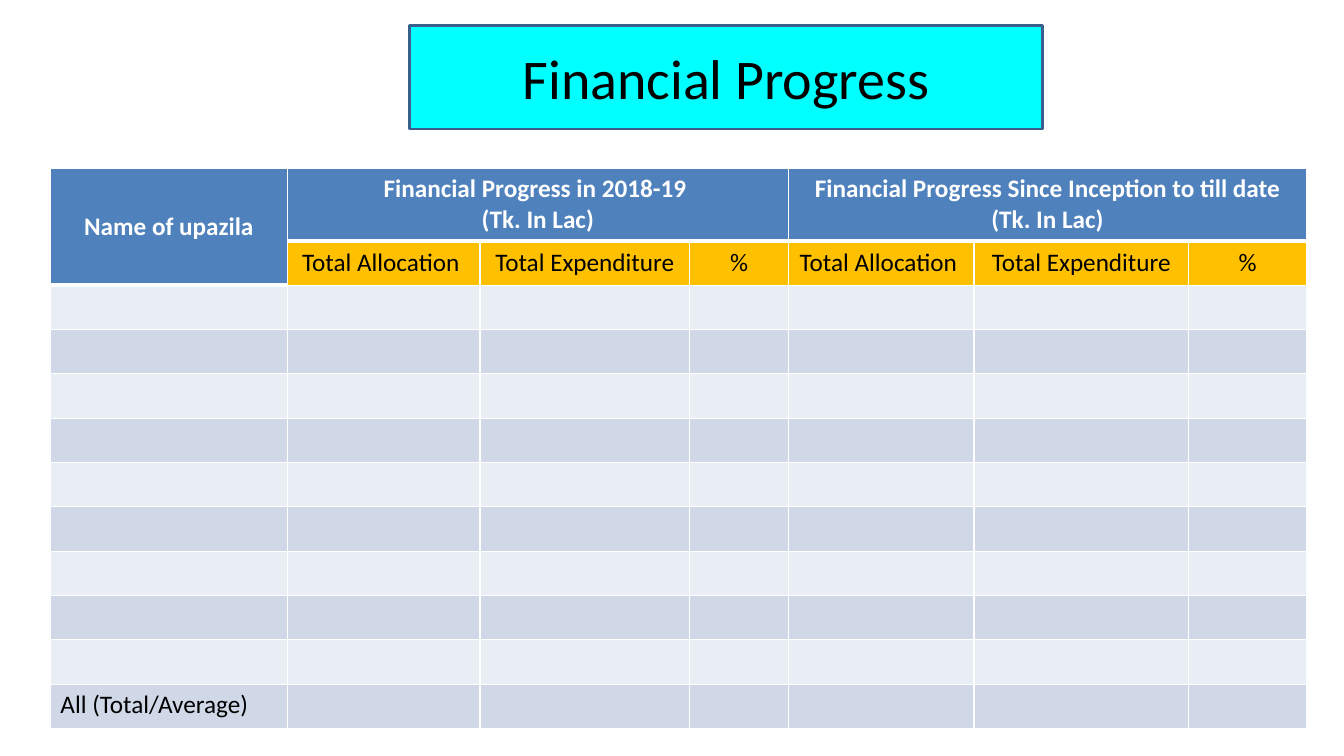
from lxml import etree
from pptx import Presentation, util as u
from pptx.dml.color import RGBColor
from pptx.enum import shapes, text
from pptx.oxml.ns import qn

WHITE, BLACK, CYAN, NAVY = "FFFFFF", "000000", "00FFFF", "3A5F8C"
BLUE, AMBER, BANDS = "4F81BD", "FFC000", ("E9EDF4", "D0D8E8")
COLUMNS = (2.35, 1.91, 2.08, 0.98, 1.84, 2.13, 1.17)
HEADER_HEIGHT, ROW_HEIGHT, ROWS = 0.72, 0.44, 12
GROUPS = {1: "Financial Progress in 2018-19 \n(Tk. In Lac)",
          4: "Financial Progress Since Inception to till date\n(Tk. In Lac)"}
MEASURES = ("Total Allocation ", "Total Expenditure", "%")


def rgb(value):
    return RGBColor.from_string(value)


def fill(target, color):
    target.fill.solid()
    target.fill.fore_color.rgb = rgb(color)


def write(tf, content, size=18, color=BLACK, bold=False, font="Calibri",
          align=text.PP_ALIGN.CENTER):
    """Put one paragraph per line of content into the text frame."""
    for i, line in enumerate(content.split("\n")):
        p = tf.add_paragraph() if i else tf.paragraphs[0]
        p.alignment = align
        r = p.add_run()
        r.text = line
        r.font.size, r.font.bold, r.font.name = u.Pt(size), bold, font
        r.font.color.rgb = rgb(color)


def border(cell, top=1, bottom=1):
    """Draw white cell borders; top and bottom are widths in points."""
    props = cell._tc.get_or_add_tcPr()
    for side, width in (("L", 1), ("R", 1), ("T", top), ("B", bottom)):
        ln = etree.SubElement(props, qn(f"a:ln{side}"), w=str(u.Pt(width)))
        solid = etree.SubElement(ln, qn("a:solidFill"))
        etree.SubElement(solid, qn("a:srgbClr"), val=WHITE)


class ProgressSlide:
    def __init__(self, prs):
        self.s = prs.slides.add_slide(prs.slide_layouts[6])

    def title(self, content, *box):
        sp = self.s.shapes.add_shape(shapes.MSO_SHAPE.RECTANGLE, *map(u.Inches, box))
        sp.shadow.inherit = False
        fill(sp, CYAN)
        sp.line.color.rgb, sp.line.width = rgb(NAVY), u.Pt(2)
        sp.text_frame.vertical_anchor = text.MSO_ANCHOR.MIDDLE
        write(sp.text_frame, content, size=40)

    def cell(self, row, col, content="", **style):
        cell = self.table.cell(row, col)
        if row < 2:
            cell.vertical_anchor = text.MSO_ANCHOR.MIDDLE
        write(cell.text_frame, content, **style)

    def progress_table(self, left, top):
        heights = [HEADER_HEIGHT] + [ROW_HEIGHT] * (ROWS - 1)
        frame = self.s.shapes.add_table(
            ROWS, len(COLUMNS), u.Inches(left), u.Inches(top),
            u.Inches(sum(COLUMNS)), u.Inches(sum(heights)))
        self.table = frame.table
        for column, width in zip(self.table.columns, COLUMNS):
            column.width = u.Inches(width)
        for row, height in zip(self.table.rows, heights):
            row.height = u.Inches(height)
        for row in range(ROWS):
            for col in range(len(COLUMNS)):
                self.paint(row, col)

        self.table.cell(0, 0).merge(self.table.cell(1, 0))
        self.cell(0, 0, "Name of upazila", color=WHITE, bold=True)
        for first, heading in GROUPS.items():
            self.table.cell(0, first).merge(self.table.cell(0, first + 2))
            self.cell(0, first, heading, color=WHITE, bold=True)
            for i, measure in enumerate(MEASURES):
                self.cell(1, first + i, measure)
        self.cell(ROWS - 1, 0, "All (Total/Average)", align=text.PP_ALIGN.LEFT)

    def paint(self, row, col):
        """Fill and border a cell; thick rules close the blue headings."""
        cell = self.table.cell(row, col)
        last_heading_row = 0 if col else 1
        border(cell, top=3 if row == last_heading_row + 1 else 1,
               bottom=3 if row <= last_heading_row else 1)
        if row <= last_heading_row:
            fill(cell, BLUE)
        else:
            fill(cell, AMBER if row == 1 else BANDS[row % 2])


def main():
    prs = Presentation()
    prs.slide_width, prs.slide_height = u.Inches(13.33), u.Inches(7.5)
    slide = ProgressSlide(prs)
    slide.title("Financial Progress", 4.06, 0.25, 6.28, 1.03)
    slide.progress_table(0.5, 1.67)
    prs.save("out.pptx")


if __name__ == "__main__":
    main()
